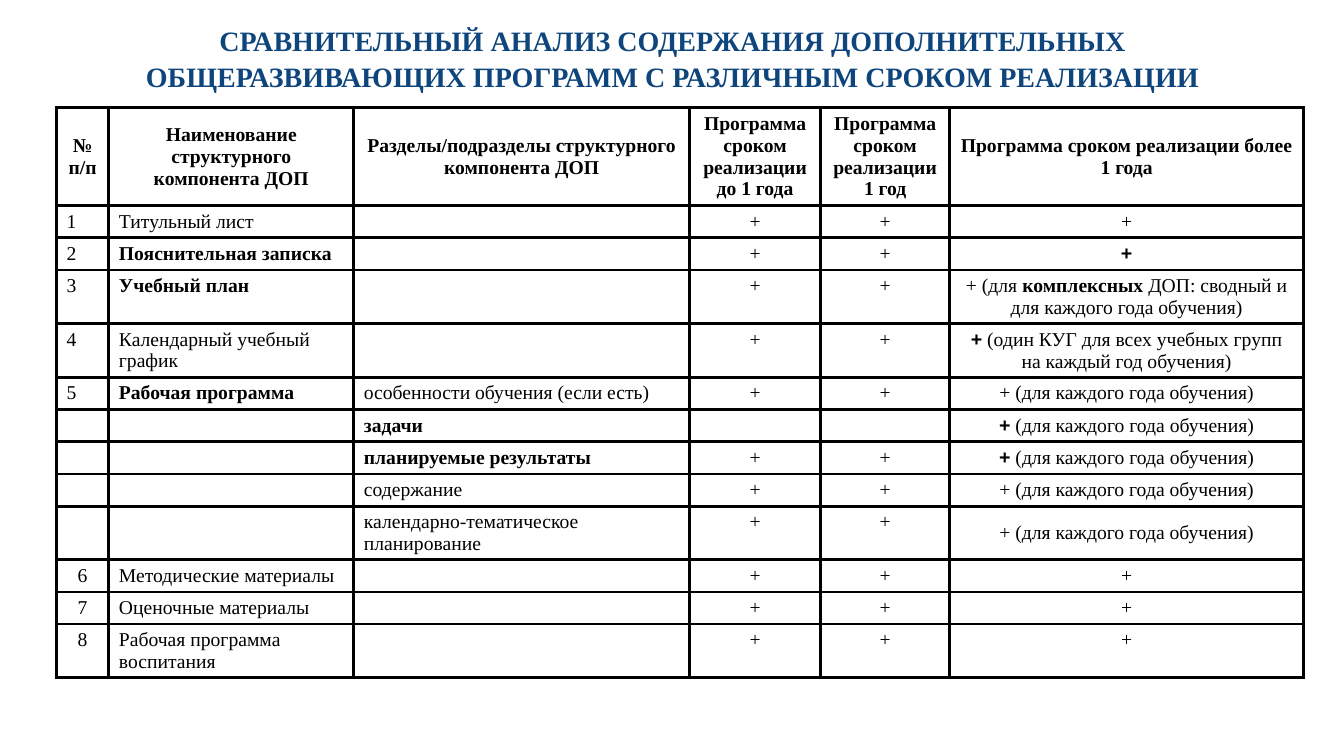
from dataclasses import dataclass

from lxml import etree
from pptx import Presentation
from pptx.dml.color import RGBColor
from pptx.enum.text import MSO_ANCHOR, PP_ALIGN
from pptx.oxml.ns import qn
from pptx.util import Inches, Pt

LEFT, CENTER = PP_ALIGN.LEFT, PP_ALIGN.CENTER
TOP, MIDDLE = MSO_ANCHOR.TOP, MSO_ANCHOR.MIDDLE
TITLE_ONLY = 5


@dataclass(frozen=True)
class Theme:
    """Colours, fonts and sizes of the slide."""
    font: str = "Times New Roman"
    mark_font: str = "Arial"
    heading: RGBColor = RGBColor(0x0E, 0x45, 0x7C)
    ink: RGBColor = RGBColor(0, 0, 0)
    heading_size: Pt = Pt(20)
    table_size: Pt = Pt(14)
    border: Pt = Pt(2.25)


@dataclass(frozen=True)
class Span:
    """A piece of cell text with its own weight and font."""
    text: str
    bold: bool = False
    font: str = Theme.font


THEME = Theme()
HEADING = ("СРАВНИТЕЛЬНЫЙ АНАЛИЗ СОДЕРЖАНИЯ ДОПОЛНИТЕЛЬНЫХ "
           "ОБЩЕРАЗВИВАЮЩИХ ПРОГРАММ С РАЗЛИЧНЫМ СРОКОМ РЕАЛИЗАЦИИ")
COLUMN_WIDTHS = [0.52, 2.43, 3.33, 1.3, 1.28, 3.51]
HEADER_HEIGHT, ONE_LINE, TWO_LINES = 0.97, 0.32, 0.53
TWO_LINE_ROWS = {3, 4, 9, 12}
CENTERED_NUMBERS = {"6", "7", "8"}
MIDDLE_NOTE_ROWS = {6, 9}
YEARLY = "(для каждого года обучения)"
BOLD_PLUS = Span("+", True, THEME.mark_font)
BOLD_YEARLY = [BOLD_PLUS, Span(" " + YEARLY)]

HEADER = [
    "№ п/п",
    "Наименование структурного компонента ДОП",
    "Разделы/подразделы структурного компонента ДОП",
    "Программа сроком реализации\nдо 1 года",
    "Программа сроком реализации\n1 год",
    "Программа сроком реализации более 1 года",
]
COMPONENTS = [
    ["1", "Титульный лист", "", "+", "+", "+"],
    ["2", [Span("Пояснительная записка", True)], "", "+", "+", [BOLD_PLUS]],
    ["3", [Span("Учебный план", True)], "", "+", "+",
     [Span("+ (для "), Span("комплексных ", True),
      Span("ДОП: сводный и для каждого года обучения)")]],
    ["4", "Календарный учебный график", "", "+", "+",
     [BOLD_PLUS, Span(" (один КУГ для всех учебных групп на каждый год обучения)")]],
    ["5", [Span("Рабочая программа", True)], "особенности обучения (если есть)",
     "+", "+", "+ " + YEARLY],
    ["", "", [Span("задачи", True)], "", "", BOLD_YEARLY],
    ["", "", [Span("планируемые результаты", True)], "+", "+", BOLD_YEARLY],
    ["", "", "содержание", "+", "+", "+ " + YEARLY],
    ["", "", "календарно-тематическое планирование", "+", "+", "+ " + YEARLY],
    ["6", "Методические материалы", "", "+", "+", "+"],
    ["7", "Оценочные материалы", "", "+", "+", "+"],
    ["8", "Рабочая программа воспитания", "", "+", "+", "+"],
]


def style_paragraph(paragraph, size, color, align, bold):
    """Set alignment and the shared font of a paragraph."""
    paragraph.alignment = align
    font = paragraph.font
    font.name, font.size, font.bold = THEME.font, size, bold
    font.color.rgb = color


def add_heading(slide):
    """Place and format the slide title."""
    heading = slide.shapes.title
    heading.left, heading.top = Inches(0.67), Inches(0.22)
    heading.width, heading.height = Inches(12), Inches(0.7)
    frame = heading.text_frame
    frame.text = HEADING
    frame.word_wrap = True
    frame.vertical_anchor = MIDDLE
    style_paragraph(frame.paragraphs[0], THEME.heading_size, THEME.heading, CENTER, True)
    frame.paragraphs[0].line_spacing = 1.05


def draw_borders(cell):
    """Outline a cell on all four sides."""
    properties = cell._tc.get_or_add_tcPr()
    for position, side in enumerate(("lnL", "lnR", "lnT", "lnB")):
        line = etree.Element(qn(f"a:{side}"), w=str(THEME.border))
        fill = etree.SubElement(line, qn("a:solidFill"))
        etree.SubElement(fill, qn("a:srgbClr"), val=str(THEME.ink))
        properties.insert(position, line)


def write_cell(cell, content, align, anchor, bold=False):
    """Fill a cell with plain text or spans."""
    cell.fill.background()
    cell.vertical_anchor = anchor
    draw_borders(cell)
    frame = cell.text_frame
    if isinstance(content, str):
        frame.text = content
    else:
        for span in content:
            run = frame.paragraphs[0].add_run()
            run.text = span.text
            run.font.bold, run.font.name = span.bold, span.font
    for paragraph in frame.paragraphs:
        style_paragraph(paragraph, THEME.table_size, THEME.ink, align, bold)
        if not paragraph.runs:
            etree.SubElement(paragraph._p, qn("a:endParaRPr"),
                             sz=str(int(THEME.table_size.pt * 100)))


def add_comparison(slide):
    """Build the table comparing the programmes."""
    table = slide.shapes.add_table(
        len(COMPONENTS) + 1, len(HEADER), Inches(0.56), Inches(1.07),
        Inches(sum(COLUMN_WIDTHS)), Inches(HEADER_HEIGHT)).table
    table.first_row = table.horz_banding = False
    for column, width in zip(table.columns, COLUMN_WIDTHS):
        column.width = Inches(width)
    table.rows[0].height = Inches(HEADER_HEIGHT)
    for column, label in enumerate(HEADER):
        write_cell(table.cell(0, column), label, CENTER, MIDDLE, True)
    for row, component in enumerate(COMPONENTS, 1):
        table.rows[row].height = Inches(TWO_LINES if row in TWO_LINE_ROWS else ONE_LINE)
        for column, content in enumerate(component):
            centered = column > 2 or (column == 0 and content in CENTERED_NUMBERS)
            middle = column == 5 and row in MIDDLE_NOTE_ROWS
            write_cell(table.cell(row, column), content,
                       CENTER if centered else LEFT, MIDDLE if middle else TOP)


def main():
    """Create and save the presentation."""
    deck = Presentation()
    deck.slide_width, deck.slide_height = Inches(13.33), Inches(7.5)
    slide = deck.slides.add_slide(deck.slide_layouts[TITLE_ONLY])
    add_heading(slide)
    add_comparison(slide)
    deck.save("out.pptx")


if __name__ == "__main__":
    main()
